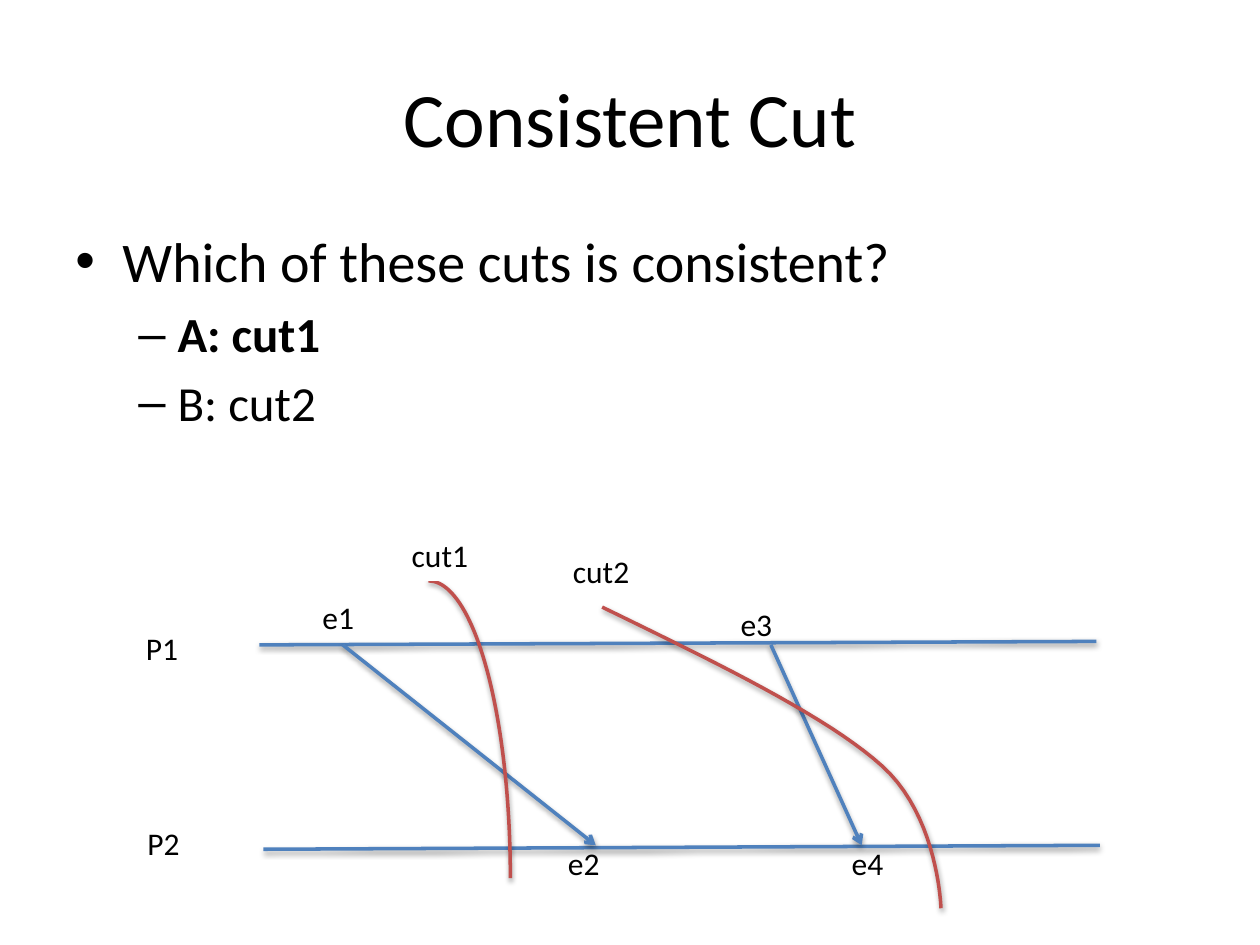
from lxml.etree import SubElement
from pptx import Presentation
from pptx.dml.color import RGBColor
from pptx.enum.shapes import MSO_CONNECTOR as Connector, MSO_SHAPE as Shape
from pptx.enum.text import MSO_ANCHOR as Anchor, MSO_AUTO_SIZE as AutoSize, PP_ALIGN as Align
from pptx.oxml.ns import qn
from pptx.util import Cm, Pt

COLORS = {"text": "000000", "event": "4F81BD", "cut": "C0504D", "paper": "FFFFFF"}
FONT = "Calibri"

# All positions are in centimetres.
TITLE = "Consistent Cut"
QUESTION = [  # text, level, bold
    ("Which of these cuts is consistent?", 0, False),
    ("A: cut1", 1, True),
    ("B: cut2", 1, False),
]
LEVELS = [  # bullet, size, left margin, hanging indent
    ("•", 32, 0.95, 0.95),
    ("–", 28, 2.06, 0.79),
]
PROCESS_LINES = [((5.23, 13), (22.1, 12.93)), ((5.31, 17.12), (22.17, 17.04))]
MESSAGES = [((6.91, 13), (12.01, 17.04)), ((15.54, 13), (17.37, 17.04))]
LABELS = [
    ("P1", 2.69, 12.55), ("P2", 2.72, 16.48),
    ("e1", 6.25, 11.94), ("e2", 11.2, 16.89),
    ("e3", 14.68, 12.07), ("e4", 16.92, 16.89),
]
CUT_LABELS = [("cut1", 8.05, 10.69), ("cut2", 11.3, 11)]
CUT1_ARC = (6.99, 11.71, 3.3, 11.99)
CUT2_START = (12.14, 12.24)
CUT2_CURVES = [  # two control points and an end point each
    ((14.4, 13.34), (16.66, 14.43), (17.78, 15.44)),
    ((18.92, 16.46), (18.97, 18.31), (18.97, 18.31)),
]
CURVE_STEPS = 20

prs = Presentation()
prs.slide_width, prs.slide_height = Cm(25.4), Cm(19.05)
slide = prs.slides.add_slide(prs.slide_layouts[6])
shapes = slide.shapes


def color(name):
    return RGBColor.from_string(COLORS[name])


def add_text(text, left, top, width, height, size=18, align=Align.LEFT,
             anchor=Anchor.TOP, wrap=False, fill=None):
    box = shapes.add_textbox(Cm(left), Cm(top), Cm(width), Cm(height))
    if fill:
        box.fill.solid()
        box.fill.fore_color.rgb = color(fill)
    frame = box.text_frame
    frame.word_wrap, frame.vertical_anchor = wrap, anchor
    frame.auto_size = AutoSize.NONE if wrap else AutoSize.SHAPE_TO_FIT_TEXT
    frame.text = text
    for paragraph in frame.paragraphs:
        paragraph.alignment = align
        style_font(paragraph.runs[0].font, size)
    return frame


def style_font(font, size, bold=False):
    font.name, font.size, font.bold = FONT, Pt(size), bold
    font.color.rgb = color("text")


def add_bullet(paragraph, bullet, margin, hanging):
    props = paragraph._p.get_or_add_pPr()
    props.set("marL", str(Cm(margin)))
    props.set("indent", str(-Cm(hanging)))
    SubElement(props, qn("a:buFont"), typeface="Arial")
    SubElement(props, qn("a:buChar"), char=bullet)


def style_stroke(stroke, name, arrow=False):
    """Give a line its colour, its soft drop shadow and, if asked, an arrowhead."""
    stroke.line.color.rgb = color(name)
    stroke.line.width = Pt(2)
    if arrow:
        SubElement(stroke.line._get_or_add_ln(), qn("a:tailEnd"), type="arrow")
    effects = SubElement(stroke._element.spPr, qn("a:effectLst"))
    shadow = SubElement(effects, qn("a:outerShdw"), blurRad=str(Pt(3.1)),
                        dist=str(Pt(1.6)), dir="5400000", rotWithShape="0")
    shade = SubElement(shadow, qn("a:srgbClr"), val=COLORS["text"])
    SubElement(shade, qn("a:alpha"), val="38000")


def add_line(start, end, arrow=False):
    ends = [Cm(value) for value in start + end]
    style_stroke(shapes.add_connector(Connector.STRAIGHT, *ends), "event", arrow)


def bezier_points(p0, p1, p2, p3):
    for step in range(1, CURVE_STEPS + 1):
        t = step / CURVE_STEPS
        u = 1 - t
        yield tuple(
            Cm(u**3 * a + 3 * u * u * t * b + 3 * u * t * t * c + t**3 * d)
            for a, b, c, d in zip(p0, p1, p2, p3)
        )


add_text(TITLE, 1.27, 0.76, 22.86, 3.18, size=44, align=Align.CENTER,
         anchor=Anchor.MIDDLE, wrap=True)

question = add_text("\n".join(text for text, _, _ in QUESTION),
                    1.27, 4.45, 22.86, 12.57, wrap=True)
for paragraph, (_, level, bold) in zip(question.paragraphs, QUESTION):
    bullet, size, margin, hanging = LEVELS[level]
    paragraph.level = level
    paragraph.space_before = Pt(size * 0.2)
    style_font(paragraph.runs[0].font, size, bold)
    add_bullet(paragraph, bullet, margin, hanging)

for start, end in PROCESS_LINES:
    add_line(start, end)
for start, end in MESSAGES:
    add_line(start, end, arrow=True)

cut1 = shapes.add_shape(Shape.ARC, *[Cm(value) for value in CUT1_ARC])
cut1.fill.background()
style_stroke(cut1, "cut")

for text, left, top in LABELS:
    add_text(text, left, top, 1.17, 1.02)
for text, left, top in CUT_LABELS:
    add_text(text, left, top, 1.65, 1.02, fill="paper")

points, here = [], CUT2_START
for curve in CUT2_CURVES:
    points.extend(bezier_points(here, *curve))
    here = curve[-1]
outline = shapes.build_freeform(*[Cm(value) for value in CUT2_START])
outline.add_line_segments(points, close=False)
cut2 = outline.convert_to_shape()
cut2.fill.background()
style_stroke(cut2, "cut")

prs.save("out.pptx")
